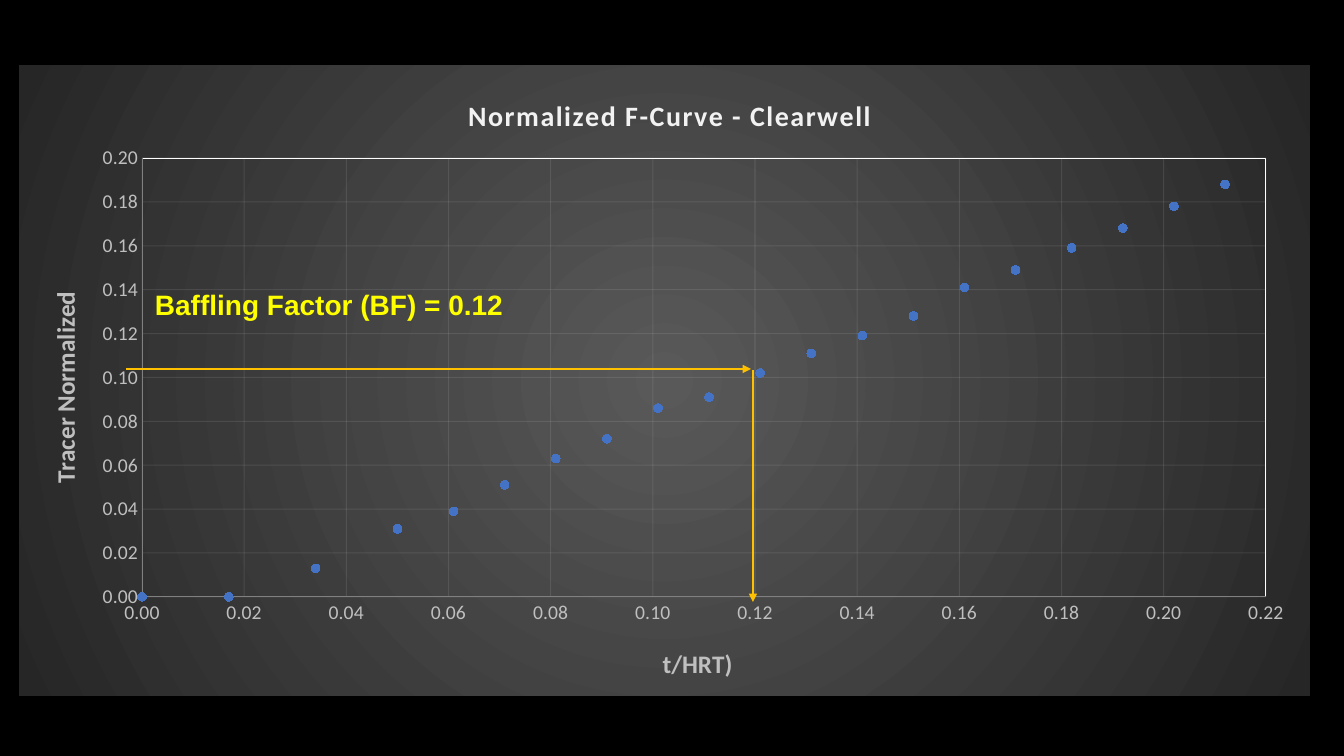
from dataclasses import dataclass

from lxml import etree
from pptx import Presentation, util as u
from pptx.chart.data import XyChartData
from pptx.dml.color import RGBColor
from pptx.enum import chart as ch, shapes, text
from pptx.oxml import parse_xml
from pptx.oxml.ns import nsdecls, qn


@dataclass(frozen=True)
class Theme:
    """Colours, fonts and type sizes of the slide."""
    backdrop: str = "000000"
    glow: str = "595959"
    edge: str = "262626"
    white: str = "FFFFFF"
    heading: str = "F2F2F2"
    label: str = "BFBFBF"
    axis: str = "808080"
    tracer: str = "4472C4"
    arrow: str = "FFC000"
    note: str = "FFFF00"
    chart_font: str = "Calibri"
    note_font: str = "Arial"
    heading_size: int = 20
    axis_title_size: int = 18
    tick_size: int = 14


THEME = Theme()
CHART_BOX = (19, 65, 1291, 631)
HRT = (0, 0.017, 0.034, 0.05, 0.061, 0.071, 0.081, 0.091, 0.101, 0.111,
       0.121, 0.131, 0.141, 0.151, 0.161, 0.171, 0.182, 0.192, 0.202, 0.212)
TRACER = (0, 0, 0.013, 0.031, 0.039, 0.051, 0.063, 0.072, 0.086, 0.091,
          0.102, 0.111, 0.119, 0.128, 0.141, 0.149, 0.159, 0.168, 0.178, 0.188)


def px(length):
    """Turn pixels into EMU."""
    return u.Emu(round(length * 914400 / 100.8))


def rgb(colour):
    """Turn a hex string into a colour."""
    return RGBColor.from_string(colour)


def style_font(font, face, size, colour, bold=False):
    """Set face, size, colour and weight of a font."""
    font.name, font.size, font.bold = face, u.Pt(size), bold
    font.color.rgb = rgb(colour)


def style_line(line, colour, width=0.75, opacity=100):
    """Set colour, width and opacity percentage of a line."""
    line.width = u.Pt(width)
    line.color.rgb = rgb(colour)
    if opacity < 100:
        solid = line.fill._xPr.find(qn("a:solidFill"))
        etree.SubElement(solid[0], qn("a:alpha"), val=str(opacity * 1000))


def place(part, left, top, width=None, height=None):
    """Fix a chart part at a slide position in pixels."""
    layout = part.find(qn("c:layout"))
    if layout is None:
        layout = etree.Element(qn("c:layout"))
        part.insert(0 if part.find(qn("c:tx")) is None else 1, layout)
    manual = etree.SubElement(layout, qn("c:manualLayout"))
    if width:
        etree.SubElement(manual, qn("c:layoutTarget"), val="inner")
    for mode in ("xMode", "yMode"):
        etree.SubElement(manual, qn(f"c:{mode}"), val="edge")
    chart_left, chart_top, chart_width, chart_height = CHART_BOX
    shares = {"x": (left - chart_left) / chart_width,
              "y": (top - chart_top) / chart_height}
    if width:
        shares.update(w=width / chart_width, h=height / chart_height)
    for key, share in shares.items():
        etree.SubElement(manual, qn(f"c:{key}"), val=f"{share:.4f}")


def write_title(title, words, size, colour, left, top, spacing=0):
    """Write a chart or axis title at a slide position."""
    run = title.text_frame.paragraphs[0].add_run()
    run.text = words
    style_font(run.font, THEME.chart_font, size, colour, True)
    run.font._element.set("spc", str(spacing))
    place(title._element, left, top)


def style_axis(axis, words, left, top, maximum, number_format):
    """Set scale, grid, labels and title of an axis."""
    axis.minimum_scale, axis.maximum_scale, axis.major_unit = 0, maximum, 0.02
    axis.major_tick_mark = axis.minor_tick_mark = ch.XL_TICK_MARK.NONE
    axis.has_major_gridlines = True
    style_line(axis.major_gridlines.format.line, THEME.heading, opacity=10)
    style_line(axis.format.line, THEME.axis)
    axis.tick_labels.number_format = number_format
    axis.tick_labels.number_format_is_linked = False
    style_font(axis.tick_labels.font, THEME.chart_font, THEME.tick_size, THEME.label)
    write_title(axis.axis_title, words, THEME.axis_title_size, THEME.label, left, top)


def fill_chart(chart):
    """Give the chart its round gradient and the plot its frame."""
    chart._chartSpace.find(qn("c:chart")).addnext(parse_xml(
        f'<c:spPr {nsdecls("c", "a")}><a:gradFill><a:gsLst>'
        f'<a:gs pos="0"><a:srgbClr val="{THEME.glow}"/></a:gs>'
        f'<a:gs pos="100000"><a:srgbClr val="{THEME.edge}"/></a:gs></a:gsLst>'
        '<a:path path="circle"><a:fillToRect l="50000" t="50000" r="50000" b="50000"/>'
        '</a:path></a:gradFill><a:ln><a:noFill/></a:ln></c:spPr>'))
    plot_area = chart._chartSpace.find(qn("c:chart")).find(qn("c:plotArea"))
    place(plot_area, 142, 158, 1124, 439)
    plot_area.append(parse_xml(
        f'<c:spPr {nsdecls("c", "a")}><a:noFill/><a:ln w="9525"><a:solidFill>'
        f'<a:srgbClr val="{THEME.white}"/></a:solidFill></a:ln></c:spPr>'))


def add_curve(slide):
    """Add the scatter chart of the tracer."""
    data = XyChartData()
    points = data.add_series("Series 1")
    for hrt, tracer in zip(HRT, TRACER):
        points.add_data_point(hrt, tracer)
    chart = slide.shapes.add_chart(
        ch.XL_CHART_TYPE.XY_SCATTER, *map(px, CHART_BOX), data).chart
    style_font(chart.font, THEME.chart_font, 10, THEME.white)
    chart.has_legend = False
    fill_chart(chart)
    write_title(chart.chart_title, "Normalized F-Curve - Clearwell",
                THEME.heading_size, THEME.heading, 463, 91, spacing=100)
    style_axis(chart.category_axis, "t/HRT)", 658, 642, 0.22, "#,##0.00")
    style_axis(chart.value_axis, "Tracer Normalized", 43, 287, 0.2, "0.00")
    chart.plots[0].vary_by_categories = False
    curve = chart.plots[0].series[0]
    curve.smooth = False
    curve.format.line.fill.background()
    curve.marker.style, curve.marker.size = ch.XL_MARKER_STYLE.CIRCLE, 6
    curve.marker.format.fill.solid()
    curve.marker.format.fill.fore_color.rgb = rgb(THEME.tracer)
    curve.marker.format.line.fill.background()


def add_arrow(slide, *ends):
    """Add a straight arrow between two points."""
    arrow = slide.shapes.add_connector(shapes.MSO_CONNECTOR.STRAIGHT, *map(px, ends))
    style_line(arrow.line, THEME.arrow, 1.5)
    etree.SubElement(arrow.line._get_or_add_ln(), qn("a:tailEnd"), type="triangle")
    etree.SubElement(arrow._element.spPr, qn("a:effectLst"))


def add_note(slide, words, *box):
    """Add a bold one-line note."""
    frame = slide.shapes.add_textbox(*map(px, box)).text_frame
    frame.word_wrap = False
    frame.auto_size = text.MSO_AUTO_SIZE.SHAPE_TO_FIT_TEXT
    run = frame.paragraphs[0].add_run()
    run.text = words
    style_font(run.font, THEME.note_font, THEME.heading_size, THEME.note, True)


def main():
    """Build and save the slide."""
    deck = Presentation()
    deck.slide_width, deck.slide_height = px(1344), px(756)
    slide = deck.slides.add_slide(deck.slide_layouts[6])
    slide.background.fill.solid()
    slide.background.fill.fore_color.rgb = rgb(THEME.backdrop)
    add_curve(slide)
    add_arrow(slide, 126, 369, 751, 369)
    add_arrow(slide, 753, 370, 753, 602)
    add_note(slide, "Baffling Factor (BF) = 0.12", 145, 283, 371, 44)
    deck.save("out.pptx")


if __name__ == "__main__":
    main()
